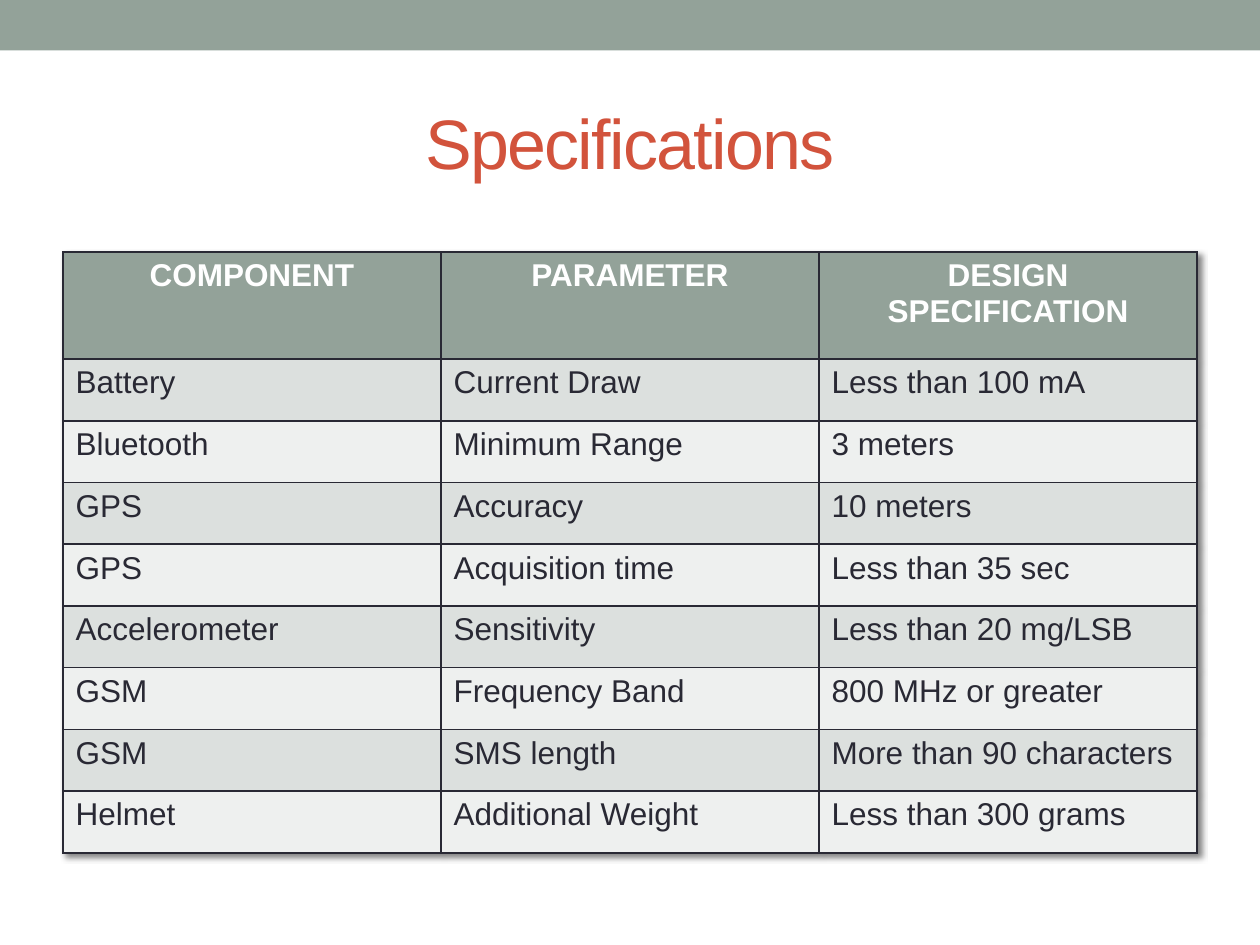
from lxml import etree
from pptx import Presentation
from pptx.dml.color import RGBColor
from pptx.enum import shapes, text
from pptx.oxml import parse_xml
from pptx.oxml.ns import nsdecls, qn
from pptx.util import Pt

SAGE = RGBColor(0x93, 0xA2, 0x99)
RUST = RGBColor(0xD2, 0x53, 0x3C)
INK = RGBColor(0x29, 0x29, 0x34)
WHITE = RGBColor(0xFF, 0xFF, 0xFF)
BANDS = [RGBColor(0xEE, 0xF0, 0xEF), RGBColor(0xDC, 0xE0, 0xDE)]
FONT = "Arial"

ROWS = [
    ("COMPONENT", "PARAMETER", "DESIGN SPECIFICATION"),
    ("Battery", "Current Draw", "Less than 100 mA"),
    ("Bluetooth", "Minimum Range", "3 meters"),
    ("GPS", "Accuracy", "10 meters"),
    ("GPS", "Acquisition time", "Less than 35 sec"),
    ("Accelerometer", "Sensitivity", "Less than 20 mg/LSB"),
    ("GSM", "Frequency Band", "800 MHz or greater"),
    ("GSM", "SMS length", "More than 90 characters"),
    ("Helmet", "Additional Weight", "Less than 300 grams"),
]
HEADER_HEIGHT, ROW_HEIGHT, COLUMN_WIDTH = Pt(61.2), Pt(35.28), Pt(216)


def add_borders(cell):
    properties = cell._tc.get_or_add_tcPr()
    for side in ("lnL", "lnR", "lnT", "lnB"):
        line = etree.SubElement(properties, qn(f"a:{side}"), w=str(Pt(1)))
        fill = etree.SubElement(line, qn("a:solidFill"))
        etree.SubElement(fill, qn("a:srgbClr"), val=str(INK))


presentation = Presentation()
presentation.slide_width, presentation.slide_height = Pt(720), Pt(540)
slide = presentation.slides.add_slide(presentation.slide_layouts[5])

# Top band
band = slide.shapes.add_shape(shapes.MSO_SHAPE.RECTANGLE, 0, 0, Pt(720), Pt(28.8))
band.shadow.inherit = False
band.fill.solid()
band.fill.fore_color.rgb = SAGE
band.line.fill.background()

# Title
title = slide.shapes.title
title.left, title.top, title.width, title.height = Pt(36), Pt(41.76), Pt(648), Pt(77.76)
title.text_frame.text = "Specifications"
title.text_frame.vertical_anchor = text.MSO_ANCHOR.MIDDLE
paragraph = title.text_frame.paragraphs[0]
paragraph.alignment = text.PP_ALIGN.CENTER
paragraph.font.name = FONT
paragraph.font.size = Pt(40)
paragraph.font.color.rgb = RUST
paragraph.runs[0].font._element.set("spc", "-100")

# Specification table
table = slide.shapes.add_table(
    len(ROWS), 3, Pt(36), Pt(144), 3 * COLUMN_WIDTH,
    HEADER_HEIGHT + (len(ROWS) - 1) * ROW_HEIGHT,
).table
table._tbl.tblPr.insert(0, parse_xml(
    f'<a:effectLst {nsdecls("a")}>'
    f'<a:outerShdw blurRad="{Pt(3)}" dist="{Pt(3)}" dir="2700000" algn="tl" rotWithShape="0">'
    '<a:srgbClr val="000000"><a:alpha val="50000"/></a:srgbClr>'
    '</a:outerShdw></a:effectLst>'))
for column in table.columns:
    column.width = COLUMN_WIDTH

for row_index, values in enumerate(ROWS):
    is_header = row_index == 0
    table.rows[row_index].height = HEADER_HEIGHT if is_header else ROW_HEIGHT
    for cell, value in zip(table.rows[row_index].cells, values):
        add_borders(cell)
        cell.fill.solid()
        cell.fill.fore_color.rgb = SAGE if is_header else BANDS[row_index % 2]
        cell.text = value
        paragraph = cell.text_frame.paragraphs[0]
        paragraph.alignment = text.PP_ALIGN.CENTER if is_header else text.PP_ALIGN.JUSTIFY
        paragraph.font.name = FONT
        paragraph.font.size = Pt(18)
        paragraph.font.bold = is_header
        paragraph.font.color.rgb = WHITE if is_header else INK

presentation.save("out.pptx")
